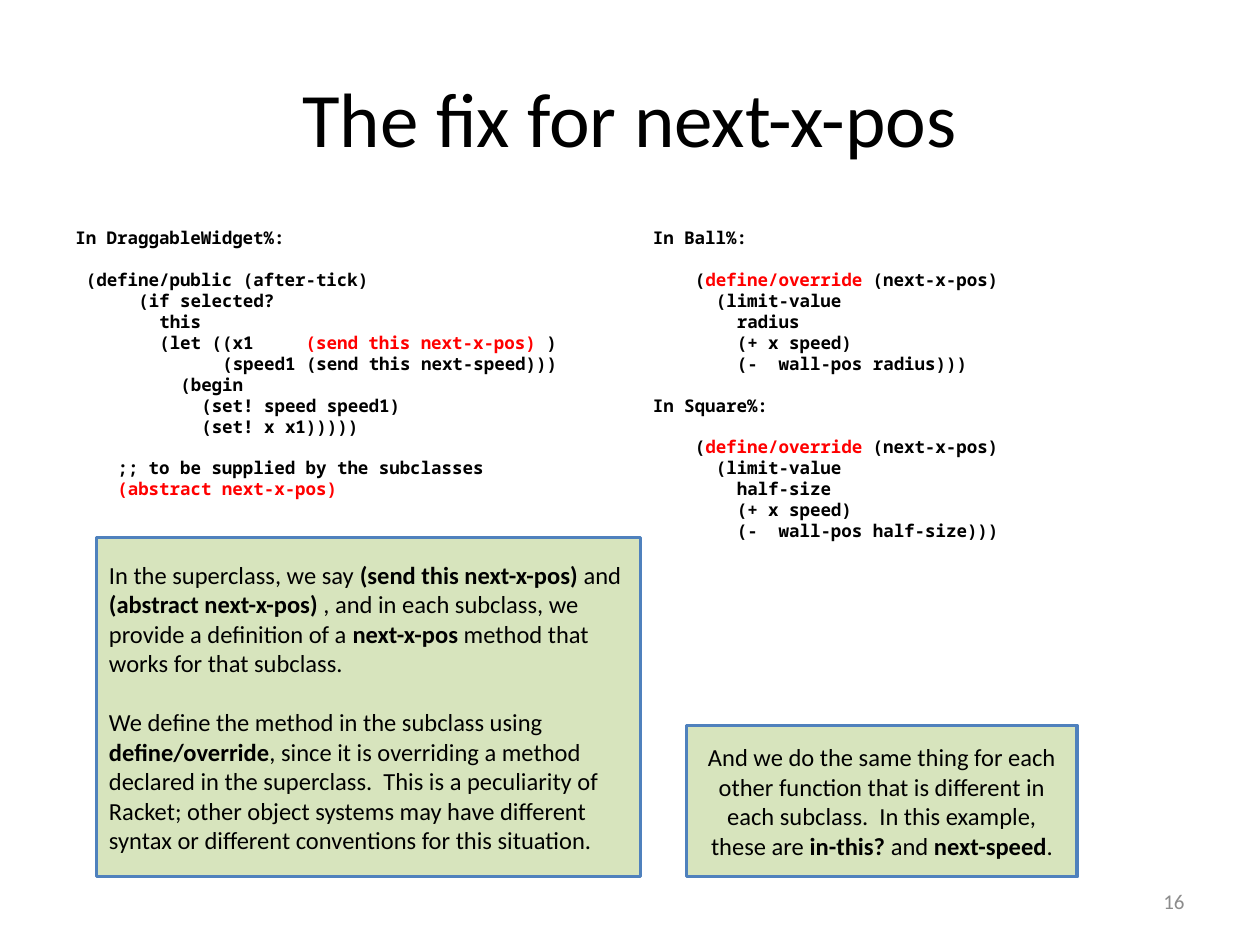
import pptx
import pptx.util
import pptx.dml.color
import pptx.enum.shapes
import pptx.enum.text

Pt = pptx.util.Pt
RGB = pptx.dml.color.RGBColor
ALIGN = pptx.enum.text.PP_ALIGN
ANCHOR = pptx.enum.text.MSO_ANCHOR

BLACK = RGB(0, 0, 0)
RED = RGB(255, 0, 0)
GRAY = RGB(0x8C, 0x8C, 0x8C)
GREEN = RGB(0xD7, 0xE4, 0xBD)
BLUE = RGB(0x4F, 0x81, 0xBD)

UNIT = Pt(6)  # grid cell, and the width of one 10 pt code character
COLS, ROWS = 120, 90
MARK = "*"    # switches the accent of a run on and off

CODE = {"name": "Noto Sans Mono", "size": Pt(10), "bold": True}
NOTE = {"name": "Calibri", "size": Pt(14), "bold": False}
HEAD = {"name": "Calibri", "size": Pt(44), "bold": False}
PAGE = {"name": "Calibri", "size": Pt(12), "bold": False}

WIDGET = """In DraggableWidget%:

 (define/public (after-tick)
      (if selected?
        this
        (let ((x1     *(send this next-x-pos) *)
              (speed1 (send this next-speed)))
          (begin
            (set! speed speed1)
            (set! x x1)))))

    ;; to be supplied by the subclasses
    *(abstract next-x-pos)*"""

OVERRIDE = """In {name}%:

    (*define/override* (next-x-pos)
      (limit-value
        {edge}
        (+ x speed)
        (-  wall-pos {edge})))"""

SHAPES = "\n\n".join(OVERRIDE.format(name=name, edge=edge) for name, edge in
                     (("Ball", "radius"), ("Square", "half-size")))

SUPER = [
    "In the superclass, we say *(send this next-x-pos) *and "
    "*(abstract next-x-pos) *, and in each subclass, we provide a "
    "definition of a *next-x-pos* method that works for that subclass.",
    "We define the method in the subclass using *define/override*, since it "
    "is overriding a method declared in the superclass.  This is a "
    "peculiarity of Racket; other object systems may have different syntax "
    "or different conventions for this situation.",
]
OTHERS = [
    "And we do the same thing for each other function that is different in "
    "each subclass.  In this example,",
    "these are *in-this? *and *next-speed*.",
]


def grid(*cells):
    return [int(cell * UNIT) for cell in cells]


def style(item, form):
    for key, value in form.items():
        setattr(item, key, value)


def add_runs(para, text, form, color=BLACK, accent=BLACK, bold=False):
    """Write text, giving the marked parts the accent colour or weight."""
    for i, part in enumerate(text.split(MARK)):
        if part:
            run = para.add_run()
            run.text = part
            style(run.font, form)
            run.font.color.rgb = accent if i % 2 else color
            if bold and i % 2:
                run.font.bold = True


def next_para(frame, first):
    return frame.paragraphs[0] if first else frame.add_paragraph()


def add_title(slide, box, text):
    title = slide.shapes.title
    style(title, dict(zip(("left", "top", "width", "height"), grid(*box))))
    title.text_frame.vertical_anchor = ANCHOR.MIDDLE
    para = title.text_frame.paragraphs[0]
    para.alignment = ALIGN.CENTER
    add_runs(para, text, HEAD)


def add_code(slide, box, code):
    """Turn leading spaces into indents and blank lines into spacing."""
    frame = slide.shapes.add_textbox(*grid(*box)).text_frame
    frame.word_wrap = True
    gap, first = 0, True
    for line in code.split("\n"):
        if not line:
            gap = Pt(12)
            continue
        text = line.lstrip()
        para = next_para(frame, first)
        style(para, {"line_spacing": Pt(12), "space_before": gap})
        para._p.get_or_add_pPr().set(
            "marL", str((len(line) - len(text)) * UNIT))
        add_runs(para, text, CODE, accent=RED)
        gap, first = 0, False


def add_note(slide, box, texts, align, gap=0):
    note = slide.shapes.add_shape(
        pptx.enum.shapes.MSO_SHAPE.RECTANGLE, *grid(*box))
    note.shadow.inherit = False
    note.fill.solid()
    note.fill.fore_color.rgb = GREEN
    note.line.color.rgb = BLUE
    note.line.width = Pt(2)
    frame = note.text_frame
    style(frame, {"word_wrap": True, "vertical_anchor": ANCHOR.MIDDLE})
    for i, text in enumerate(texts):
        para = next_para(frame, i == 0)
        style(para, {"alignment": align, "space_before": gap if i else 0})
        add_runs(para, text, NOTE, bold=True)


def add_page(slide, box, text):
    frame = slide.shapes.add_textbox(*grid(*box)).text_frame
    style(frame, {"word_wrap": True, "vertical_anchor": ANCHOR.MIDDLE})
    para = frame.paragraphs[0]
    para.alignment = ALIGN.RIGHT
    add_runs(para, text, PAGE, color=GRAY)


def main():
    deck = pptx.Presentation()
    deck.slide_width, deck.slide_height = grid(COLS, ROWS)
    slide = deck.slides.add_slide(deck.slide_layouts[5])
    add_title(slide, (6, 3.6, 108, 15), "The fix for next-x-pos")
    for left, code in ((6, WIDGET), (61, SHAPES)):
        add_code(slide, (left, 21, 53, 59.4), code)
    add_page(slide, (86, 83.4, 28, 4.8), "16")
    add_note(slide, (9.2, 51.2, 51.8, 32.3), SUPER, ALIGN.LEFT, Pt(17))
    add_note(slide, (65.4, 69.1, 37.2, 14.4), OTHERS, ALIGN.CENTER)
    deck.save("out.pptx")


if __name__ == "__main__":
    main()
